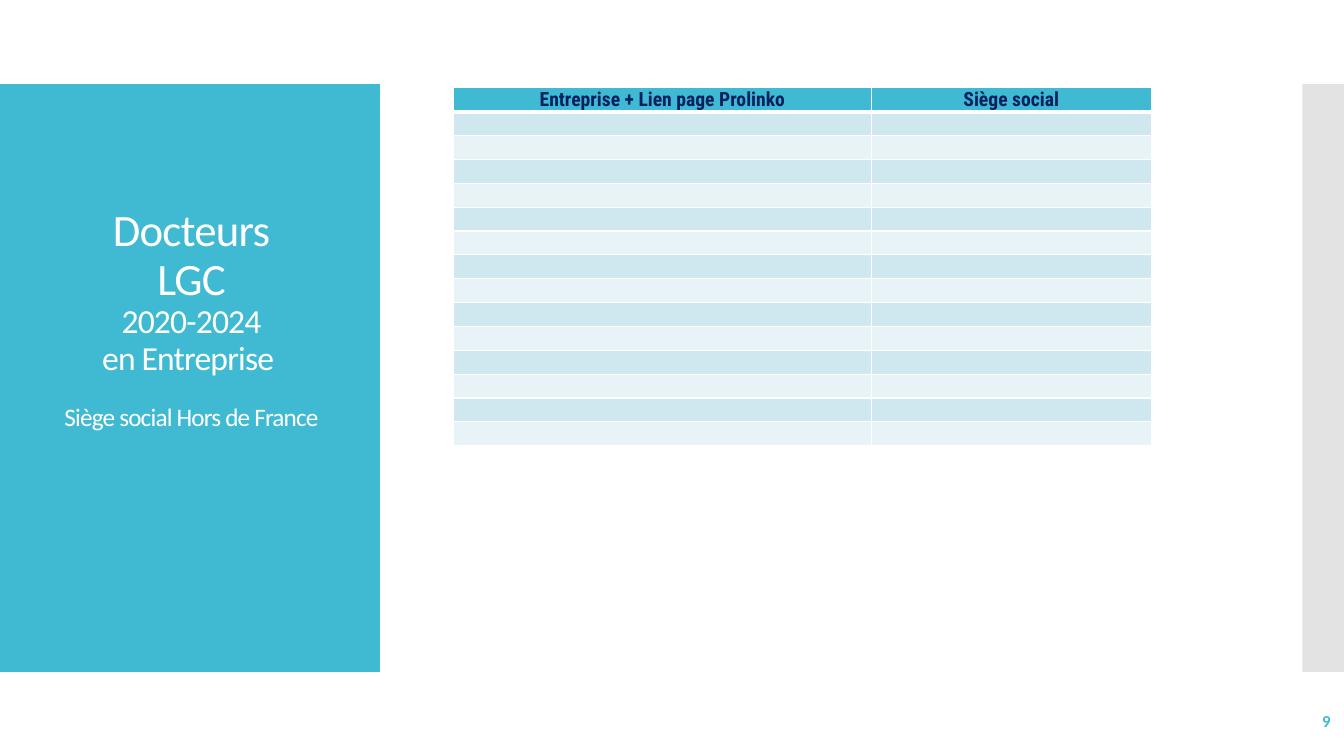
from lxml import etree
from pptx import Presentation
from pptx import util as u
from pptx.dml import color
from pptx.enum import shapes, text
from pptx.oxml import ns

TEAL, NAVY, WHITE, GREY = "40BAD2", "002060", "FFFFFF", "C8C8C8"
BANDS = ("CFE7EE", "E8F3F7")


def rgb(code):
    return color.RGBColor.from_string(code)


def assign(target, values):
    for name, value in values.items():
        setattr(target, name, value)


def margins(left, top, right, bottom):
    sides = dict(left=left, top=top, right=right, bottom=bottom)
    return {f"margin_{side}": u.Pt(size) for side, size in sides.items()}


class SlideBuilder:
    """Holds the style and the current slide."""

    def __init__(self, page, font="Calibri"):
        self.page, self.font = page, font

    def place(self, item, box):
        assign(item, dict(zip(("left", "top", "width", "height"), map(u.Pt, box))))

    def add_words(self, para, words, size, code, align, font=None, bold=False):
        para.alignment = align
        span = para.add_run()
        span.text = words
        assign(span.font, dict(name=font or self.font, size=u.Pt(size), bold=bold))
        span.font.color.rgb = rgb(code)
        return span

    def panel(self, box, code, opacity=100):
        panel = self.page.shapes.add_shape(
            shapes.MSO_SHAPE.RECTANGLE, *map(u.Pt, box))
        panel.shadow.inherit = False
        panel.line.fill.background()
        panel.fill.solid()
        panel.fill.fore_color.rgb = rgb(code)
        if opacity < 100:
            tint = panel._element.spPr.find(".//" + ns.qn("a:srgbClr"))
            etree.SubElement(tint, ns.qn("a:alpha"), val=str(opacity * 1000))

    def title(self, box, lines, inset_top):
        title = self.page.shapes.title
        # Bring the title in front of the panels
        self.page.shapes._spTree.append(title._element)
        self.place(title, box)
        frame = title.text_frame
        assign(frame, dict(word_wrap=True, auto_size=text.MSO_AUTO_SIZE.NONE,
                           vertical_anchor=text.MSO_ANCHOR.TOP,
                           **margins(7.2, inset_top, 7.2, 3.6)))
        for index, (words, size, gap_after) in enumerate(lines):
            para = frame.add_paragraph() if index else frame.paragraphs[0]
            assign(para, dict(line_spacing=0.9, space_before=u.Pt(0),
                              space_after=u.Pt(gap_after)))
            span = self.add_words(para, words, size, WHITE, text.PP_ALIGN.CENTER)
            span.font._element.set("spc", "-60")

    def label(self, box, words, size, code):
        label = self.page.shapes.add_textbox(*map(u.Pt, box))
        frame = label.text_frame
        assign(frame, dict(word_wrap=True, vertical_anchor=text.MSO_ANCHOR.MIDDLE))
        self.add_words(frame.paragraphs[0], words, size, code,
                       text.PP_ALIGN.RIGHT, bold=True)

    def borders(self, cell, widths):
        properties = cell._tc.get_or_add_tcPr()
        for side, width in zip("LRTB", widths):
            line = etree.SubElement(properties, ns.qn("a:ln" + side),
                                    w=str(u.Pt(width)))
            fill = etree.SubElement(line, ns.qn("a:solidFill"))
            etree.SubElement(fill, ns.qn("a:srgbClr"), val=WHITE)

    def table(self, left, top, headings, widths, row_count, row_height):
        box = (left, top, sum(widths), row_count * row_height)
        table = self.page.shapes.add_table(
            row_count, len(headings), *map(u.Pt, box)).table
        for column, width in zip(table.columns, widths):
            column.width = u.Pt(width)
        for number, row in enumerate(table.rows):
            row.height = u.Pt(row_height)
            for heading, cell in zip(headings, row.cells):
                assign(cell, dict(vertical_anchor=text.MSO_ANCHOR.BOTTOM,
                                  **margins(0.7, 0.7, 0.7, 0)))
                self.borders(cell, (1, 1, 3 if number == 1 else 1,
                                    3 if number == 0 else 1))
                cell.fill.solid()
                cell.fill.fore_color.rgb = rgb(
                    BANDS[(number - 1) % 2] if number else TEAL)
                para = cell.text_frame.paragraphs[0]
                if number == 0:
                    self.add_words(para, heading, 14, NAVY, text.PP_ALIGN.CENTER,
                                   "Roboto Condensed", True)
                else:
                    # Small type keeps the empty rows at their set height
                    etree.SubElement(para._p, ns.qn("a:endParaRPr"), sz="1000")


def main():
    deck = Presentation()
    assign(deck, dict(slide_width=u.Pt(960), slide_height=u.Pt(540)))
    builder = SlideBuilder(deck.slides.add_slide(deck.slide_layouts[5]))

    # Side panels
    builder.panel((0, 60, 271.4, 420), TEAL)
    builder.panel((930.2, 60, 29.8, 420), GREY, opacity=50)

    # Title: words, size, gap after
    builder.title((6.5, 88.6, 260.6, 362.2), (
        ("Docteurs", 32, 0),
        ("LGC", 32, 0),
        ("2020-2024", 24, 0),
        ("en Entreprise ", 24, 19.8),
        ("Siège social Hors de France", 18, 0),
    ), inset_top=60)

    # Company table
    builder.table(324.2, 62.6, ("Entreprise + Lien page Prolinko", "Siège social"),
                  (298.1, 200.2), row_count=15, row_height=17.04)

    # Page number
    builder.label((837.4, 500.4, 120.2, 28.8), "9", 12, TEAL)

    deck.save("out.pptx")


if __name__ == "__main__":
    main()
